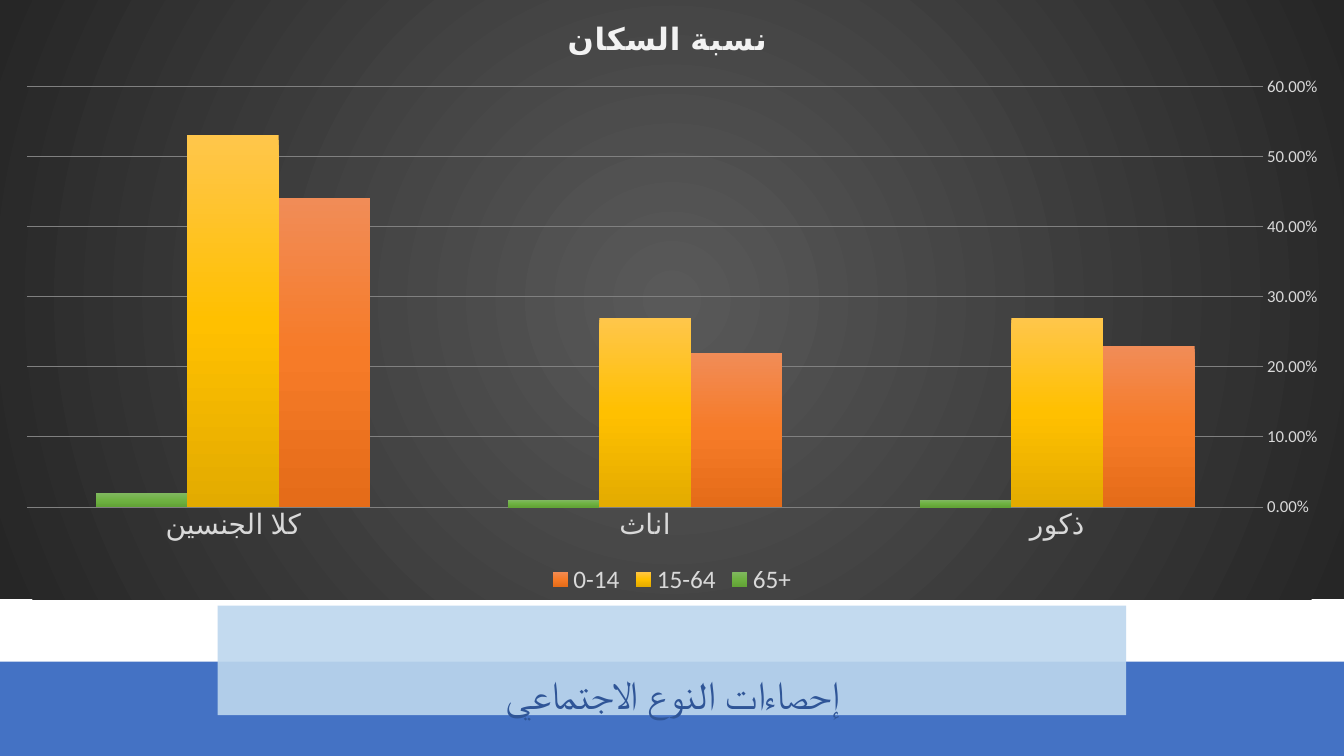
from lxml import etree
from pptx import Presentation
from pptx.chart.data import CategoryChartData
from pptx.dml.color import RGBColor
from pptx.enum.chart import XL_CHART_TYPE as ChartType
from pptx.enum.chart import XL_LEGEND_POSITION as LegendPosition
from pptx.enum.chart import XL_TICK_MARK as TickMark
from pptx.enum.shapes import MSO_SHAPE as Shape
from pptx.enum.text import MSO_ANCHOR as Anchor
from pptx.enum.text import PP_ALIGN as Align
from pptx.oxml import parse_xml
from pptx.oxml.ns import qn
from pptx.util import Inches, Pt

WHITE = RGBColor(0xFF, 0xFF, 0xFF)
BAND_BLUE = RGBColor(0x44, 0x72, 0xC4)
PANEL_BLUE = RGBColor(0xBD, 0xD7, 0xEE)
TITLE_BLUE = RGBColor(0x2F, 0x55, 0x97)
CHART_TITLE = RGBColor(0xF2, 0xF2, 0xF2)
LABEL_GREY = RGBColor(0xD9, 0xD9, 0xD9)
GRID_GREY = RGBColor(0x80, 0x80, 0x80)
BACKDROP = [RGBColor(0x59, 0x59, 0x59), RGBColor(0x26, 0x26, 0x26)]
ORANGES = [RGBColor(0xF1, 0x8C, 0x57), RGBColor(0xF6, 0x7B, 0x28), RGBColor(0xE5, 0x6C, 0x19)]
YELLOWS = [RGBColor(0xFF, 0xC6, 0x4B), RGBColor(0xFF, 0xC0, 0x00), RGBColor(0xE3, 0xAB, 0x00)]
GREENS = [RGBColor(0x81, 0xB8, 0x61), RGBColor(0x6F, 0xB2, 0x42), RGBColor(0x62, 0xA3, 0x36)]

NS_A = "http://schemas.openxmlformats.org/drawingml/2006/main"
NS_C = "http://schemas.openxmlformats.org/drawingml/2006/chart"
DOWNWARD = '<a:lin ang="5400000" scaled="0"/>'
RADIAL = '<a:path path="circle"><a:fillToRect l="50000" t="50000" r="50000" b="50000"/></a:path>'

GENDERS = ["ذكور", "اناث", "كلا الجنسين"]
AGE_GROUPS = [
    ("0-14", [0.23, 0.22, 0.44], ORANGES),
    ("15-64", [0.27, 0.27, 0.53], YELLOWS),
    ("65+", [0.01, 0.01, 0.02], GREENS),
]


def gradient(colours, direction):
    """Return a gradFill whose stops are spread evenly over the colours."""
    step = 100000 // (len(colours) - 1)
    stops = "".join(f'<a:gs pos="{i * step}"><a:srgbClr val="{colour}"/></a:gs>'
                    for i, colour in enumerate(colours))
    return parse_xml(f'<a:gradFill xmlns:a="{NS_A}" rotWithShape="1">'
                     f"<a:gsLst>{stops}</a:gsLst>{direction}</a:gradFill>")


class StatisticsSlide:
    """Holds the style and the slide; boxes are shares of the slide's size."""

    latin = "Calibri"
    heading = "Lato"

    def __init__(self, deck):
        self.width, self.height = deck.slide_width, deck.slide_height
        self.slide = deck.slides.add_slide(deck.slide_layouts[5])
        backdrop = self.slide.background.fill
        backdrop.solid()
        backdrop.fore_color.rgb = WHITE

    def box(self, left, top, width, height):
        return (int(left * self.width), int(top * self.height),
                int(width * self.width), int(height * self.height))

    def style(self, font, size, colour, bold=False):
        font.name, font.size, font.bold = self.latin, Pt(size), bold
        font.color.rgb = colour

    def band(self, share, colour, opacity=100):
        band = self.slide.shapes.add_shape(Shape.RECTANGLE, *self.box(*share))
        band.shadow.inherit = False
        band.fill.solid()
        band.fill.fore_color.rgb = colour
        band.line.fill.background()
        if opacity < 100:
            tint = band._element.spPr.find(qn("a:solidFill"))[0]
            etree.SubElement(tint, qn("a:alpha")).set("val", str(opacity * 1000))

    def title(self, share, wording):
        title = self.slide.shapes.title
        title.left, title.top, title.width, title.height = self.box(*share)
        self.slide.shapes._spTree.append(title._element)
        frame = title.text_frame
        frame.word_wrap, frame.vertical_anchor = True, Anchor.MIDDLE
        paragraph = frame.paragraphs[0]
        paragraph.alignment = Align.CENTER
        paragraph._p.get_or_add_pPr().set("rtl", "1")
        run = paragraph.add_run()
        run.text = wording
        self.style(run.font, 28, TITLE_BLUE)
        run.font.name = self.heading
        etree.SubElement(run._r.rPr, qn("a:cs")).set("typeface", self.latin)

    def column_chart(self, share, wording, categories, groups, plot_share):
        data = CategoryChartData(number_format="0.00%")
        data.categories = categories
        for name, values, _ in groups:
            data.add_series(name, values)
        chart = self.slide.shapes.add_chart(
            ChartType.COLUMN_CLUSTERED, *self.box(*share), data).chart
        self.style(chart.font, 10, LABEL_GREY)
        chart_space = chart._chartSpace
        surface = parse_xml(f'<c:spPr xmlns:c="{NS_C}" xmlns:a="{NS_A}"/>')
        surface.append(gradient(BACKDROP, RADIAL))
        chart_space.find(qn("c:txPr")).addprevious(surface)

        chart.has_title = True
        run = chart.chart_title.text_frame.paragraphs[0].add_run()
        run.text = wording
        self.style(run.font, 22, CHART_TITLE, bold=True)
        run.font._element.set("spc", "50")
        chart.chart_title.include_in_layout = False

        chart.has_legend = True
        chart.legend.position = LegendPosition.BOTTOM
        chart.legend.include_in_layout = False
        self.style(chart.legend.font, 18, LABEL_GREY)

        plot = chart.plots[0]
        plot.gap_width, plot.overlap, plot.vary_by_categories = 150, 0, False
        for series, (_, _, colours) in zip(plot.series, groups):
            series._element.get_or_add_spPr().append(gradient(colours, DOWNWARD))

        for axis, size in ((chart.category_axis, 20), (chart.value_axis, 12)):
            axis.major_tick_mark = axis.minor_tick_mark = TickMark.NONE
            axis.format.line.fill.background()
            self.style(axis.tick_labels.font, size, LABEL_GREY)
        chart.category_axis.reverse_order = True
        percent = chart.value_axis
        percent.minimum_scale, percent.maximum_scale, percent.major_unit = 0, 0.6, 0.1
        percent.tick_labels.number_format = "0.00%"
        percent.tick_labels.number_format_is_linked = False
        percent.has_major_gridlines = True
        percent.major_gridlines.format.line.width = Pt(0.75)
        percent.major_gridlines.format.line.color.rgb = GRID_GREY
        self.place_plot(chart_space.chart.plotArea, plot_share)

    def place_plot(self, plot_area, share):
        """Fix the inner plot area as shares of the chart."""
        for layout in plot_area.findall(qn("c:layout")):
            plot_area.remove(layout)
        sides = "".join(f'<c:{side} val="{value}"/>' for side, value in zip("xywh", share))
        plot_area.insert(0, parse_xml(
            f'<c:layout xmlns:c="{NS_C}"><c:manualLayout><c:layoutTarget val="inner"/>'
            f'<c:xMode val="edge"/><c:yMode val="edge"/>{sides}</c:manualLayout></c:layout>'))


def main():
    deck = Presentation()
    deck.slide_width, deck.slide_height = Inches(13.33), Inches(7.5)
    page = StatisticsSlide(deck)
    page.band((0, 0.875, 1, 0.125), BAND_BLUE)
    page.band((0.162, 0.801, 0.676, 0.145), PANEL_BLUE, opacity=90)
    page.title((0.329, 0.88, 0.343, 0.076), "إحصاءات النوع الاجتماعي")
    page.column_chart((0, 0, 1, 0.793), "نسبة السكان ", GENDERS, AGE_GROUPS,
                      plot_share=(0.02, 0.144, 0.92, 0.702))
    deck.save("out.pptx")


if __name__ == "__main__":
    main()
